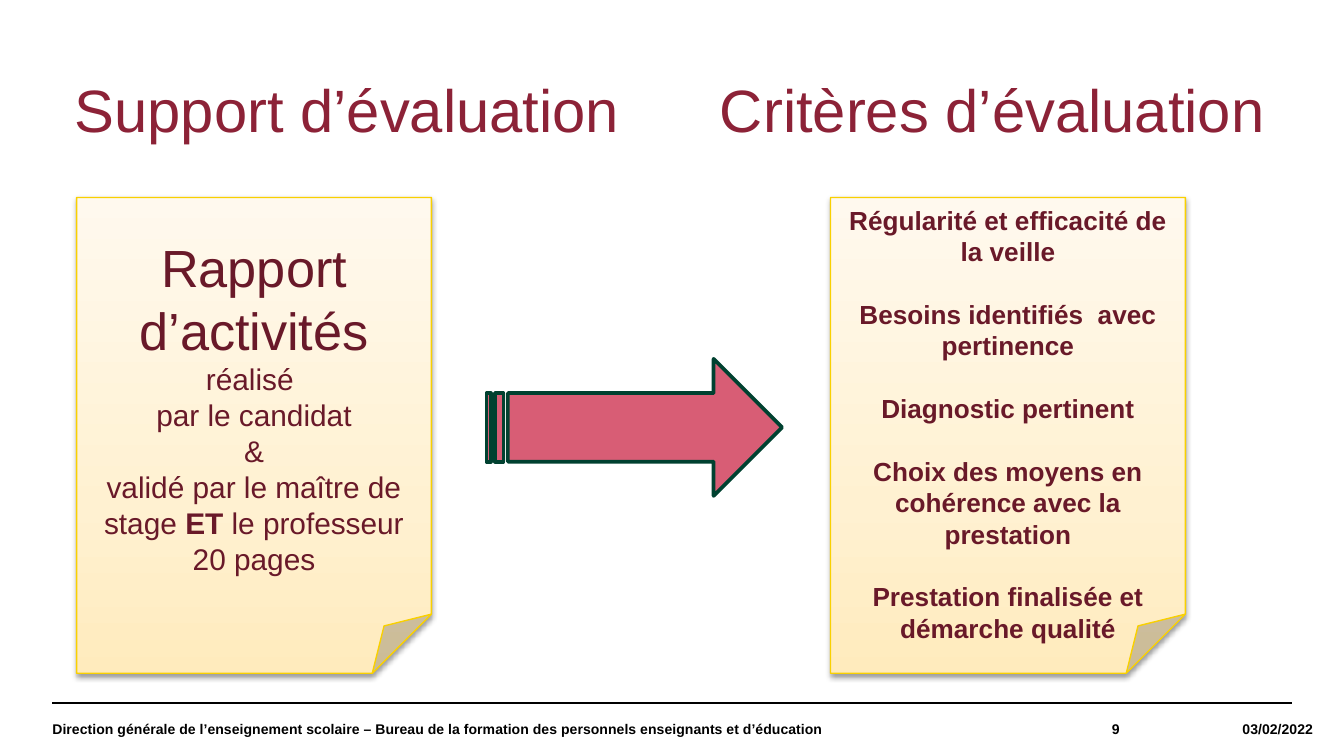
from lxml.etree import SubElement
from pptx import Presentation
from pptx.dml.color import RGBColor
from pptx.enum.shapes import MSO_CONNECTOR, MSO_SHAPE
from pptx.enum.text import MSO_ANCHOR, MSO_AUTO_SIZE, PP_ALIGN
from pptx.oxml.ns import qn
from pptx.util import Inches, Pt

BLACK, WINE, ROSE = "000000", "691929", "D85D75"
GOLD, GREEN = "F9D000", "004130"
PAPER = [(0, "FFEBBD"), (35, "FFF1D1"), (100, "FFF9EE")]
REDS = [(0, "46111C"), (50, "8C2237"), (100, ROSE)]


def rgb(code):
    return RGBColor.from_string(code)


def blend(fill, node, stops, angle):
    """Fill with a linear gradient of any number of stops."""
    fill.gradient()
    fill.gradient_angle = angle
    group = node.find(".//" + qn("a:gsLst"))
    for old in list(group):
        group.remove(old)
    for place, code in stops:
        stop = SubElement(group, qn("a:gs"), pos=str(place * 1000))
        SubElement(stop, qn("a:srgbClr"), val=code)


class Deck:
    font = "Arial"

    def __init__(self, wide, high):
        self.prs = Presentation()
        self.prs.slide_width, self.prs.slide_height = Inches(wide), Inches(high)
        self.slide = self.prs.slides.add_slide(self.prs.slide_layouts[5])
        self.shapes = self.slide.shapes

    def run(self, para, text, size, color=None, bold=False):
        run = para.add_run()
        run.text = text
        run.font.name, run.font.size, run.font.bold = self.font, Pt(size), bold
        if color:
            run.font.color.rgb = rgb(color)
        return run

    def title(self, text, box, shape=None):
        shape = shape or self.shapes.add_textbox(0, 0, 0, 0)
        shape.left, shape.top, shape.width, shape.height = map(Inches, box)
        frame = shape.text_frame
        frame.auto_size, frame.word_wrap = MSO_AUTO_SIZE.NONE, False
        frame.vertical_anchor = MSO_ANCHOR.TOP
        para = frame.paragraphs[0]
        para.alignment = PP_ALIGN.CENTER
        run = self.run(para, text, 32)
        blend(run.font.fill, para._p, REDS, 270)

    def note(self, box, paras, anchor, gap=0):
        """Folded sheet; each paragraph is a list of (text, size, bold)."""
        shape = self.shapes.add_shape(MSO_SHAPE.FOLDED_CORNER, *map(Inches, box))
        blend(shape.fill, shape._element.spPr, PAPER, 90)
        shape.line.color.rgb, shape.line.width = rgb(GOLD), Pt(0.75)
        # Soft shadow below the sheet
        shape.shadow.inherit = False
        effects = shape._element.spPr.find(qn("a:effectLst"))
        cast = SubElement(effects, qn("a:outerShdw"), blurRad=str(Pt(3.1)),
                          dist=str(Pt(1.6)), dir="5400000", rotWithShape="0")
        tint = SubElement(cast, qn("a:srgbClr"), val=BLACK)
        SubElement(tint, qn("a:alpha"), val="38000")
        # Text
        frame = shape.text_frame
        frame.word_wrap, frame.vertical_anchor = True, anchor
        for i, runs in enumerate(paras):
            para = frame.add_paragraph() if i else frame.paragraphs[0]
            para.alignment = PP_ALIGN.CENTER
            if i and gap:
                para.space_before = Pt(gap)
            for text, size, bold in runs:
                self.run(para, text, size, WINE, bold)

    def arrow(self, box):
        shape = self.shapes.add_shape(MSO_SHAPE.STRIPED_RIGHT_ARROW,
                                      *map(Inches, box))
        shape.shadow.inherit = False
        shape.fill.solid()
        shape.fill.fore_color.rgb = rgb(ROSE)
        shape.line.color.rgb, shape.line.width = rgb(GREEN), Pt(2)

    def rule(self, left, right, top):
        line = self.shapes.add_connector(
            MSO_CONNECTOR.STRAIGHT, *map(Inches, (left, top, right, top)))
        line.line.color.rgb, line.line.width = rgb(BLACK), Pt(0.8)
        SubElement(line._element.spPr, qn("a:effectLst"))

    def foot(self, text, left, wide, align):
        shape = self.shapes.add_textbox(*map(Inches, (left, 5.23, wide, 0.39)))
        frame = shape.text_frame
        frame.word_wrap, frame.vertical_anchor = True, MSO_ANCHOR.MIDDLE
        frame.margin_left = frame.margin_right = 0
        frame.margin_top = frame.margin_bottom = 0
        para = frame.paragraphs[0]
        para.alignment = align
        self.run(para, text, 7.5, BLACK, True)


def main():
    # Widescreen, 16 to 9
    deck = Deck(10, 10 * 9 / 16)

    # Footer
    deck.rule(0.39, 9.61, 5.23)
    deck.foot("9", 6.85, 1.48, PP_ALIGN.RIGHT)
    deck.foot("Direction générale de l’enseignement scolaire – Bureau de la "
              "formation des personnels enseignants et d’éducation",
              0.39, 6.46, PP_ALIGN.LEFT)
    deck.foot("03/02/2022", 8.23, 1.54, PP_ALIGN.RIGHT)

    # Headings
    deck.title("Support d’évaluation", (0.44, 0.49, 4.29, 0.64),
               deck.shapes.title)
    deck.title("Critères d’évaluation", (5.24, 0.49, 4.29, 0.64))

    # Report sheet
    deck.note((0.57, 1.47, 2.64, 3.54), [
        [("Rapport d’activités", 28, False)],
        [("réalisé ", 16, False)],
        [("par le candidat", 16, False)],
        [("&", 16, False)],
        [("validé par le maître de stage ", 16, False), ("ET", 16, True),
         (" le professeur", 16, False)],
        [("20 pages", 16, False)],
    ], MSO_ANCHOR.MIDDLE)

    # Criteria sheet
    criteria = [
        "Régularité et efficacité de la veille",
        "Besoins identifiés  avec pertinence",
        "Diagnostic pertinent",
        "Choix des moyens en cohérence avec la prestation",
        "Prestation finalisée et démarche qualité",
    ]
    deck.note((6.18, 1.47, 2.64, 3.54),
              [[(text, 14, True)] for text in criteria],
              MSO_ANCHOR.TOP, gap=16.8)

    # Arrow between the sheets
    deck.arrow((3.62, 2.67, 2.2, 1.02))

    deck.prs.save("out.pptx")


if __name__ == "__main__":
    main()
